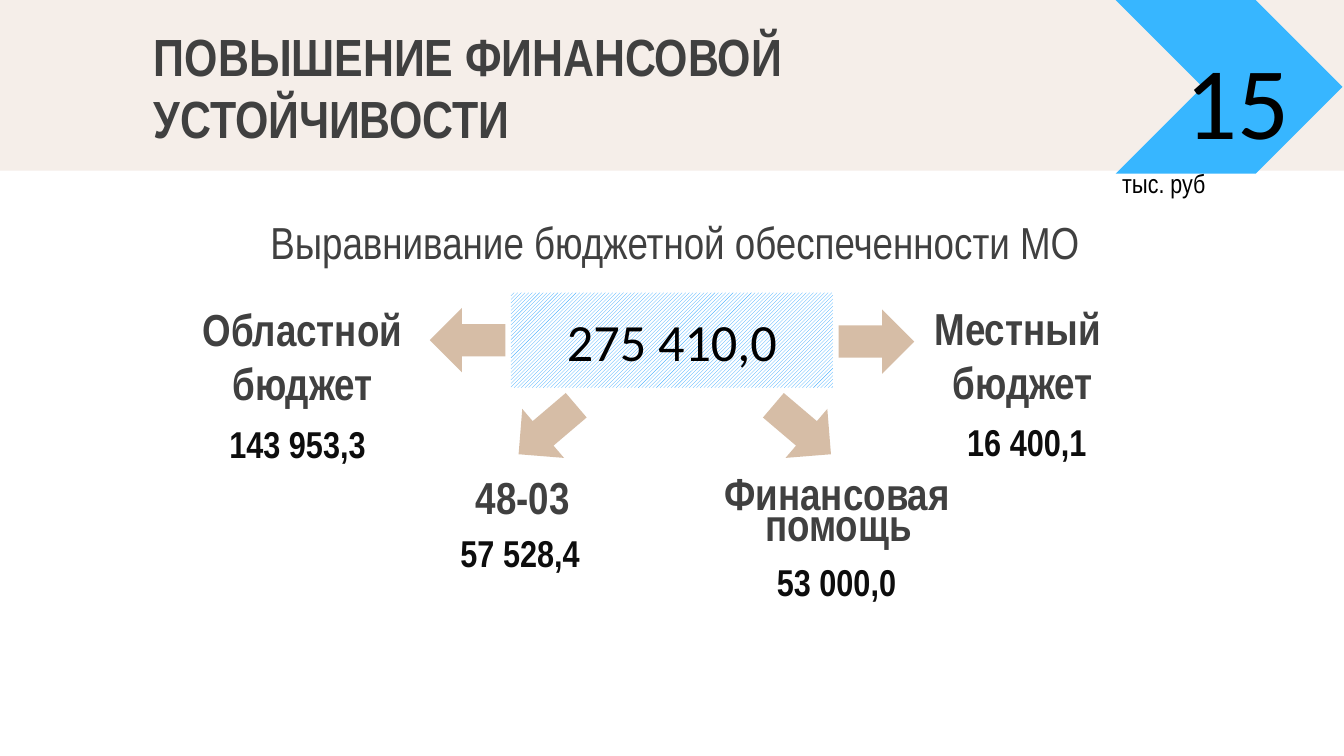
from dataclasses import dataclass
from typing import Any

from pptx import Presentation
from pptx.dml.color import RGBColor
from pptx.enum import dml, shapes, text
from pptx.util import Pt

PX = 9525
BLACK = RGBColor(0, 0, 0)
INK = RGBColor(0x0D, 0x0D, 0x0D)
GREY = RGBColor(0x40, 0x40, 0x40)
WHITE = RGBColor(0xFF, 0xFF, 0xFF)
CREAM = RGBColor(0xF5, 0xEE, 0xE9)
BLUE = RGBColor(0x37, 0xB6, 0xFF)
HATCH = RGBColor(0x2D, 0xA5, 0xFF)
SAND = RGBColor(0xD6, 0xBD, 0xA6)
NARROW = "Arial Narrow"
KIND = shapes.MSO_SHAPE
LEFT, MID = text.PP_ALIGN.LEFT, text.PP_ALIGN.CENTER


@dataclass(frozen=True)
class Box:
    x: int
    y: int
    w: int
    h: int

    def emu(self) -> list[int]:
        return [n * PX for n in (self.x, self.y, self.w, self.h)]


@dataclass(frozen=True)
class Style:
    size: int
    ink: RGBColor
    bold: bool = False
    face: str = NARROW
    align: Any = MID
    wrap: bool = False
    inset: bool = True


@dataclass(frozen=True)
class Label:
    box: Box
    lines: tuple[str, ...]
    style: Style


@dataclass(frozen=True)
class Arrow:
    x: int
    y: int
    kind: Any
    turn: float = 0


HEAD = Style(28, GREY, bold=True, align=LEFT, wrap=True, inset=False)
TOPIC = Style(24, GREY)
NAME = Style(24, GREY, bold=True)
SUM = Style(20, INK, bold=True, wrap=True)
UNIT = Style(14, BLACK, align=LEFT)
PAGE = Style(55, BLACK, face="Calibri", align=LEFT, wrap=True, inset=False)
TOTAL = Style(28, BLACK, face="Calibri", wrap=True)

LABELS = [
    Label(Box(792, 115, 80, 33), ("тыс. руб",), UNIT),
    Label(Box(178, 149, 608, 48), ("Выравнивание бюджетной обеспеченности МО",), TOPIC),
    Label(Box(134, 211, 164, 87), ("Областной", "бюджет"), NAME),
    Label(Box(657, 210, 147, 87), ("Местный ", "бюджет"), NAME),
    Label(Box(330, 331, 87, 48), ("48-03",), NAME),
    Label(Box(507, 328, 182, 48), ("Финансовая",), NAME),
    Label(Box(536, 350, 126, 48), ("помощь",), NAME),
    Label(Box(148, 296, 129, 42), ("143 953,3",), SUM),
    Label(Box(307, 374, 129, 42), ("57 528,4",), SUM),
    Label(Box(533, 395, 129, 42), ("53 000,0",), SUM),
    Label(Box(669, 295, 129, 42), ("16 400,1",), SUM),
]

ARROWS = [
    Arrow(307, 220, KIND.LEFT_ARROW),
    Arrow(599, 221, KIND.RIGHT_ARROW),
    Arrow(364, 284, KIND.LEFT_ARROW, 319.6),
    Arrow(546, 284, KIND.RIGHT_ARROW, 40.4),
]


def assign(item: Any, vals: dict[str, Any]) -> None:
    for key, val in vals.items():
        setattr(item, key, val)


def write(shape: Any, lines: tuple[str, ...], style: Style, anchor: Any) -> None:
    frame = shape.text_frame
    frame.text = "\n".join(lines)
    assign(frame, {
        "word_wrap": style.wrap,
        "vertical_anchor": anchor,
        "auto_size": text.MSO_AUTO_SIZE.NONE,
    })
    if not style.inset:
        sides = ("left", "top", "right", "bottom")
        assign(frame, {f"margin_{side}": 0 for side in sides})
    for para in frame.paragraphs:
        para.alignment = style.align
        for run in para.runs:
            assign(run.font, {
                "name": style.face,
                "size": Pt(style.size),
                "bold": style.bold,
            })
            run.font.color.rgb = style.ink


def label(slide: Any, item: Label) -> Any:
    shape = slide.shapes.add_textbox(*item.box.emu())
    write(shape, item.lines, item.style, text.MSO_ANCHOR.TOP)
    return shape


def block(slide: Any, kind: Any, box: Box, tint: RGBColor) -> Any:
    shape = slide.shapes.add_shape(kind, *box.emu())
    shape.shadow.inherit = False
    shape.fill.solid()
    shape.fill.fore_color.rgb = tint
    shape.line.fill.background()
    return shape


def header(slide: Any) -> None:
    block(slide, KIND.RECTANGLE, Box(0, 0, 960, 122), CREAM)
    block(slide, KIND.CHEVRON, Box(797, 0, 162, 124), BLUE)
    title = slide.shapes.title
    spots = zip(("left", "top", "width", "height"), Box(110, 17, 686, 90).emu())
    assign(title, dict(spots))
    write(title, ("ПОВЫШЕНИЕ ФИНАНСОВОЙ УСТОЙЧИВОСТИ",), HEAD, text.MSO_ANCHOR.TOP)
    title.element.getparent().append(title.element)
    page = label(slide, Label(Box(847, -5, 91, 108), ("15",), PAGE))
    page.text_frame.paragraphs[0].line_spacing = Pt(89.6)


def total(slide: Any) -> None:
    shape = block(slide, KIND.RECTANGLE, Box(365, 209, 230, 68), WHITE)
    shape.fill.patterned()
    shape.fill.pattern = dml.MSO_PATTERN.LIGHT_UPWARD_DIAGONAL
    shape.fill.fore_color.rgb = HATCH
    shape.fill.back_color.rgb = WHITE
    write(shape, ("275 410,0",), TOTAL, text.MSO_ANCHOR.MIDDLE)


def main() -> None:
    deck = Presentation()
    assign(deck, {"slide_width": 960 * PX, "slide_height": 540 * PX})
    slide = deck.slides.add_slide(deck.slide_layouts[5])
    header(slide)
    total(slide)
    for item in ARROWS:
        shape = block(slide, item.kind, Box(item.x, item.y, 54, 46), SAND)
        shape.rotation = item.turn
    for item in LABELS:
        label(slide, item)
    deck.save("out.pptx")


if __name__ == "__main__":
    main()
